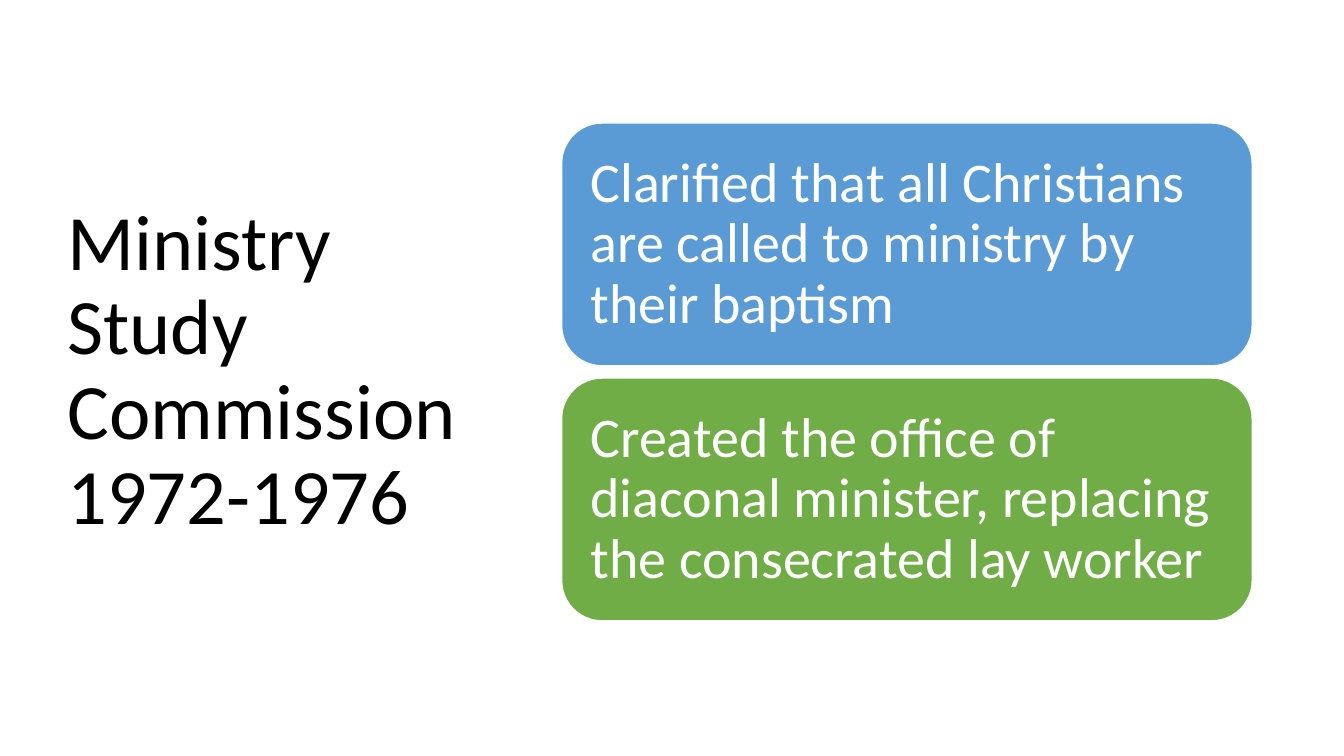
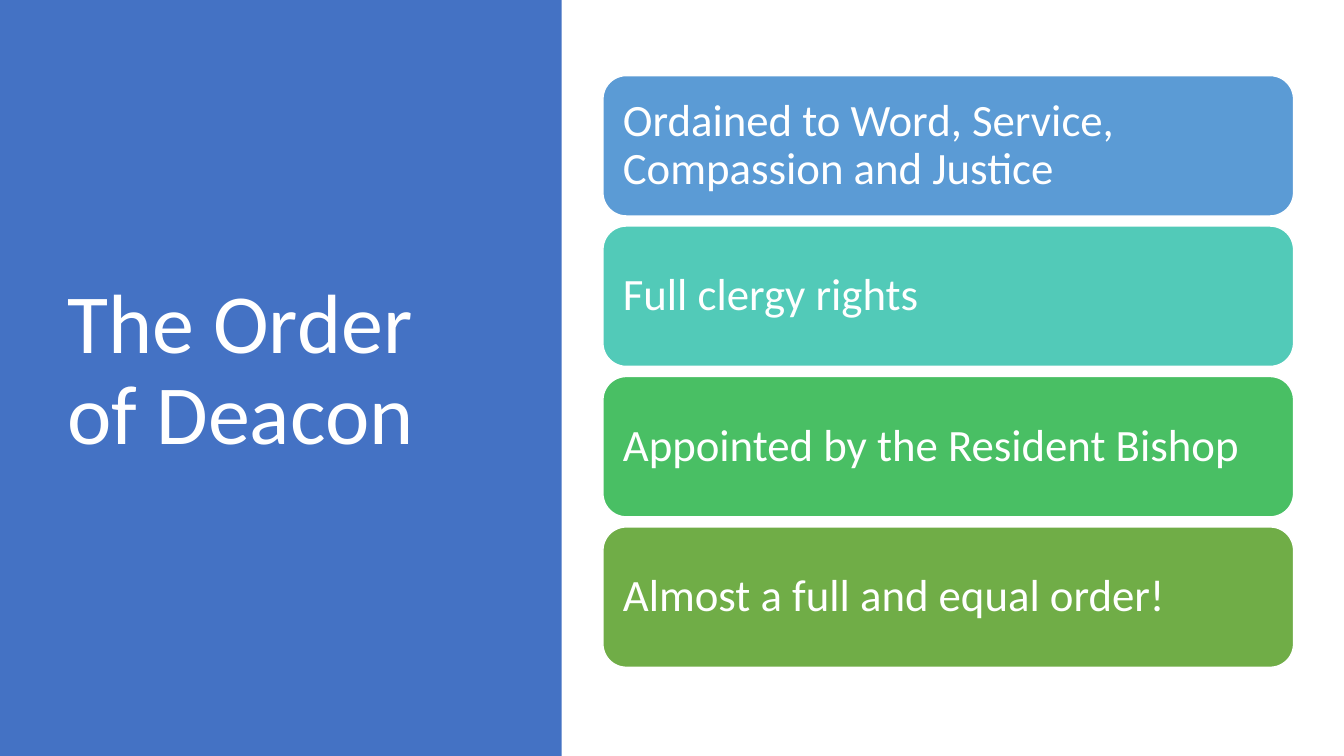
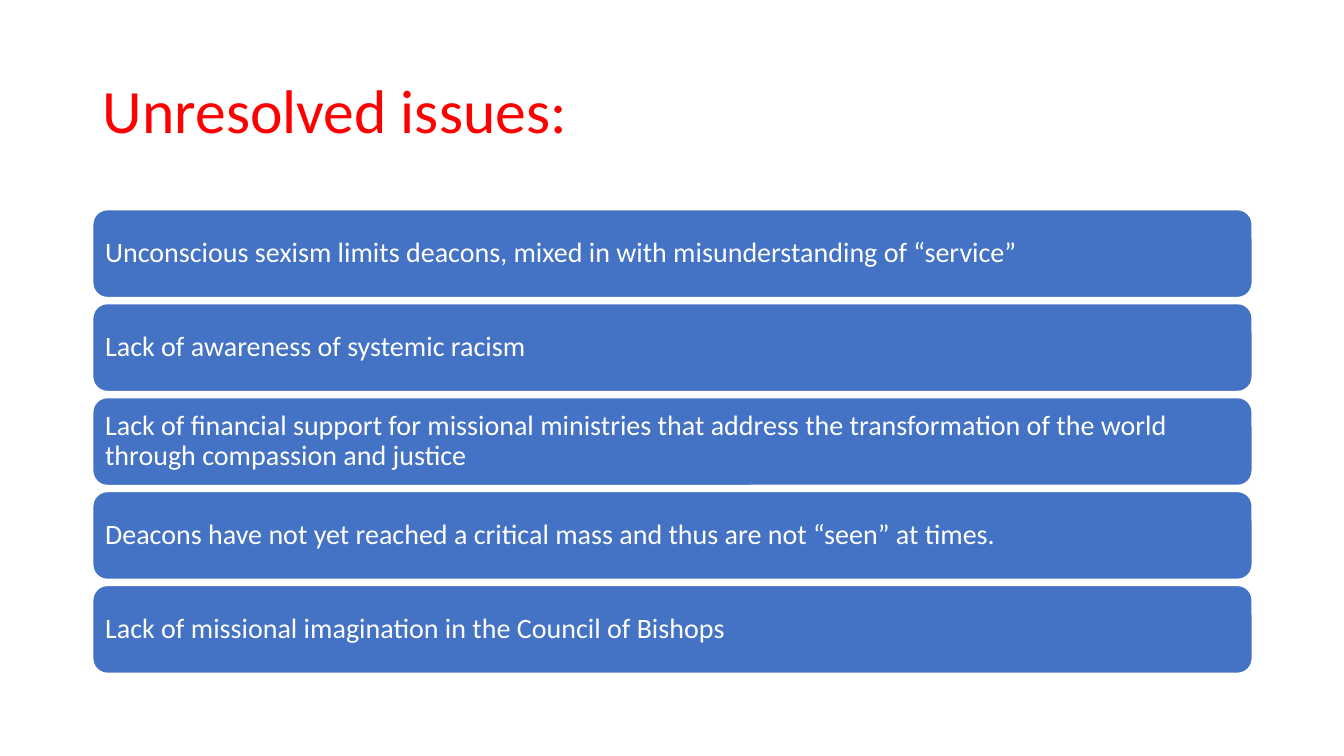
from dataclasses import dataclass

from pptx import Presentation
from pptx.dml.color import RGBColor
from pptx.enum.shapes import MSO_SHAPE
from pptx.enum.text import MSO_ANCHOR, MSO_AUTO_SIZE, PP_ALIGN
from pptx.util import Inches, Pt

RECTANGLE = MSO_SHAPE.RECTANGLE
ROUNDED_RECTANGLE = MSO_SHAPE.ROUNDED_RECTANGLE
MIDDLE = MSO_ANCHOR.MIDDLE
NO_AUTOFIT = MSO_AUTO_SIZE.NONE
LEFT = PP_ALIGN.LEFT
TITLE_ONLY = 5


@dataclass(frozen=True)
class Theme:
    """Colours, type sizes and text formats that the slides share."""
    font: str = "Calibri"
    black: str = "000000"
    white: str = "FFFFFF"
    red: str = "FF0000"
    royal: str = "4472C4"
    sky: str = "5B9BD5"
    teal: str = "52CAB8"
    emerald: str = "49BF64"
    green: str = "70AD47"
    line_spacing: float = 0.9
    outline: float = 1
    title_sizes: tuple = (56, 60, 44)
    card_sizes: tuple = (40, 32, 20)


@dataclass(frozen=True)
class Box:
    """A region of the slide in inches."""
    left: float
    top: float
    width: float
    height: float

    def lengths(self):
        """Return left, top, width and height as lengths."""
        return [Inches(value) for value in (self.left, self.top, self.width, self.height)]

    def rows(self, count, gap):
        """Split the box into equal rows with a gap between them."""
        height = (self.height - gap * (count - 1)) / count
        return [Box(self.left, self.top + index * (height + gap), self.width, height)
                for index in range(count)]


THEME = Theme()
SLIDE = Box(0, 0, 13.33, 7.5)
SIDE_PANEL = Box(0, 0, 5.57, SLIDE.height)
SIDE_TITLE = Box(0.57, 0.68, 4.16, 6.02)
TOP_TITLE = Box(0.92, 0.4, 11.5, 1.45)


def apply(target, formats):
    """Set each attribute of the target from the format values."""
    for name, value in formats.items():
        setattr(target, name, value)


def write_text(shape, text, size, color, inset=0.1):
    """Write one left-aligned, vertically centred paragraph in the shape."""
    frame = shape.text_frame
    frame.text = text
    paragraph = frame.paragraphs[0]
    margins = {f"margin_{side}": Inches(inset) for side in ("left", "top", "right", "bottom")}
    apply(frame, {"word_wrap": True, "auto_size": NO_AUTOFIT, "vertical_anchor": MIDDLE, **margins})
    apply(paragraph, {"alignment": LEFT, "line_spacing": THEME.line_spacing})
    font = paragraph.runs[0].font
    apply(font, {"name": THEME.font, "size": Pt(size)})
    font.color.rgb = RGBColor.from_string(color)


def add_filled_shape(slide, kind, box, color):
    """Add a flat filled shape without an outline or shadow."""
    shape = slide.shapes.add_shape(kind, *box.lengths())
    shape.shadow.inherit = False
    shape.fill.solid()
    shape.fill.fore_color.rgb = RGBColor.from_string(color)
    shape.line.fill.background()
    return shape


def add_titled_slide(presentation, box, text, size, color):
    """Add a slide whose title placeholder fills the box."""
    slide = presentation.slides.add_slide(presentation.slide_layouts[TITLE_ONLY])
    title = slide.shapes.title
    apply(title, dict(zip(("left", "top", "width", "height"), box.lengths())))
    write_text(title, text, size, color)
    return slide


def add_side_panel(slide, box, color):
    """Add a coloured panel behind the slide title."""
    panel = add_filled_shape(slide, RECTANGLE, box, color)
    slide.shapes.title.element.addprevious(panel.element)


def add_cards(slide, box, gap, cards, size, inset):
    """Stack rounded cards of text and colour evenly in the box."""
    for row, (text, color) in zip(box.rows(len(cards), gap), cards):
        card = add_filled_shape(slide, ROUNDED_RECTANGLE, row, color)
        card.line.color.rgb = RGBColor.from_string(THEME.white)
        card.line.width = Pt(THEME.outline)
        write_text(card, text, size, THEME.white, inset)


def build_commission(presentation):
    """Build the slide on the study commission."""
    slide = add_titled_slide(presentation, SIDE_TITLE, "Ministry Study Commission 1972-1976",
                             THEME.title_sizes[0], THEME.black)
    cards = [
        ("Clarified that all Christians are called to ministry by their baptism", THEME.sky),
        ("Created the office of diaconal minister, replacing the consecrated lay worker",
         THEME.green),
    ]
    add_cards(slide, Box(5.57, 1.22, 6.85, 4.94), 0.12, cards, THEME.card_sizes[0], 0.17)


def build_order(presentation):
    """Build the slide on the order of deacon."""
    slide = add_titled_slide(presentation, SIDE_TITLE, "The Order of Deacon",
                             THEME.title_sizes[1], THEME.white)
    add_side_panel(slide, SIDE_PANEL, THEME.royal)
    cards = [
        ("Ordained to Word, Service, Compassion and Justice", THEME.sky),
        ("Full clergy rights", THEME.teal),
        ("Appointed by the Resident Bishop", THEME.emerald),
        ("Almost a full and equal order!", THEME.green),
    ]
    add_cards(slide, Box(5.98, 0.75, 6.85, 5.87), 0.1, cards, THEME.card_sizes[1], 0.13)


def build_issues(presentation):
    """Build the slide on unresolved issues."""
    slide = add_titled_slide(presentation, TOP_TITLE, "Unresolved issues:",
                             THEME.title_sizes[2], THEME.red)
    issues = [
        "Unconscious sexism limits deacons, mixed in with misunderstanding of “service”",
        "Lack of awareness of systemic racism",
        "Lack of financial support for missional ministries that address the transformation"
        " of the world through compassion and justice",
        "Deacons have not yet reached a critical mass and thus are not “seen” at times.",
        "Lack of missional imagination in the Council of Bishops",
    ]
    cards = [(issue, THEME.royal) for issue in issues]
    add_cards(slide, Box(0.92, 2.08, 11.5, 4.6), 0.06, cards, THEME.card_sizes[2], 0.08)


def main():
    """Build and save the presentation."""
    presentation = Presentation()
    apply(presentation, {"slide_width": Inches(SLIDE.width), "slide_height": Inches(SLIDE.height)})
    for build in (build_commission, build_order, build_issues):
        build(presentation)
    presentation.save("out.pptx")


if __name__ == "__main__":
    main()
